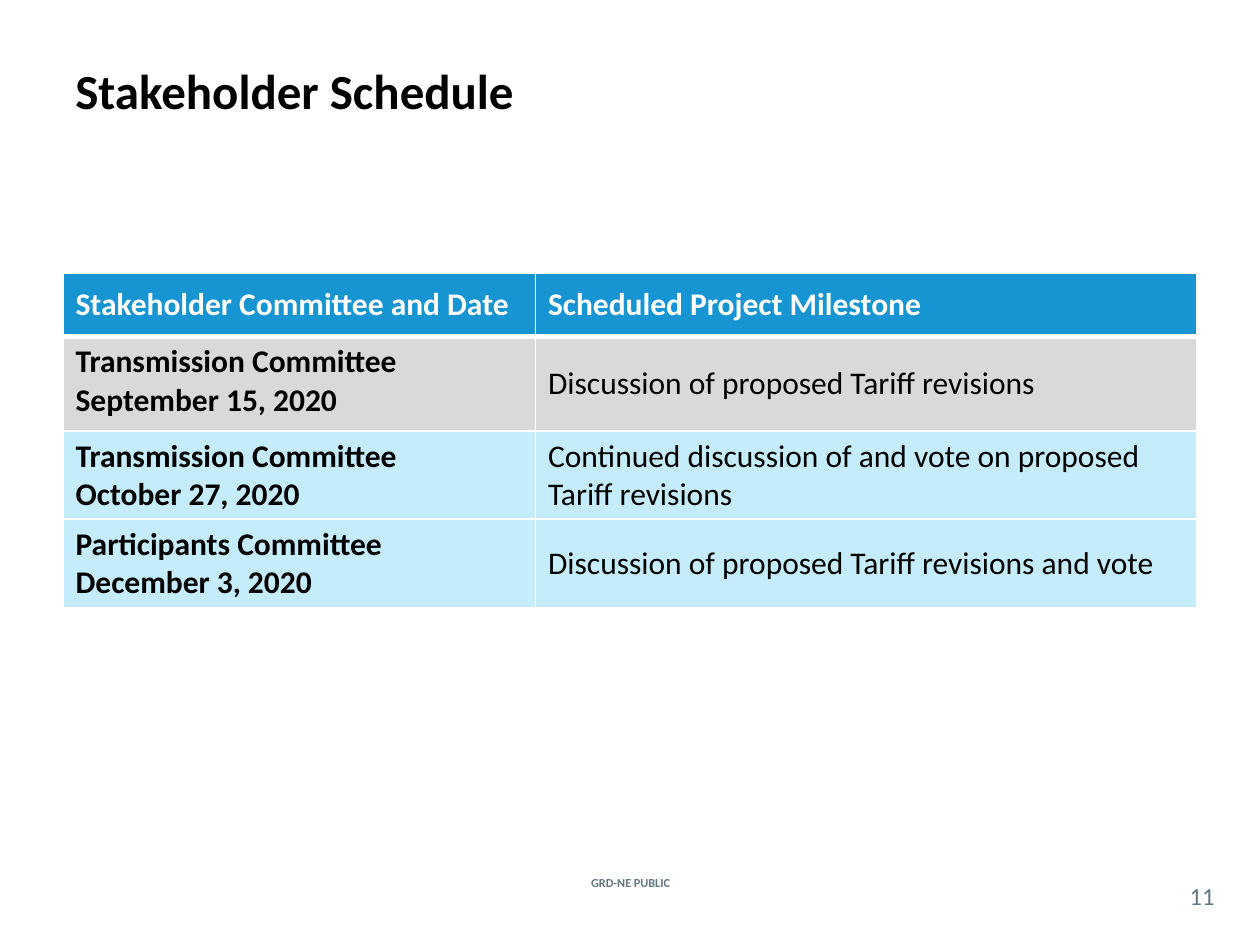
from dataclasses import dataclass

import lxml.etree
import pptx
import pptx.dml.color
import pptx.enum.text
import pptx.oxml.ns
import pptx.util
from pptx.util import Inches

Align = pptx.enum.text.PP_ALIGN
Anchor = pptx.enum.text.MSO_ANCHOR


@dataclass(frozen=True)
class Theme:
    font: str = "Calibri"
    black: str = "000000"
    white: str = "FFFFFF"
    slate: str = "62777F"
    header_blue: str = "1795D2"
    past_gray: str = "D9D9D9"
    upcoming_blue: str = "C5ECFB"
    title_size: int = 28
    table_size: int = 18
    number_size: int = 14
    footer_size: int = 7
    grid_width: int = 1
    header_rule_width: int = 3


THEME = Theme()


@dataclass(frozen=True)
class Style:
    size: int
    color: str
    bold: bool = False
    align: Align = Align.LEFT


@dataclass(frozen=True)
class Label:
    text: str
    left: float
    top: float
    width: float
    height: float
    style: Style
    margins: tuple[float, float] = (0.1, 0.05)


@dataclass(frozen=True)
class ScheduleRow:
    committee: str
    milestone: str
    height: float
    fill: str


LABELS = [
    Label("GRD-NE PUBLIC", 4.27, 6.92, 1.47, 0.17,
          Style(THEME.footer_size, THEME.slate, True, Align.CENTER)),
    Label("Stakeholder Schedule", 0.5, 0.42, 9, 0.58,
          Style(THEME.title_size, THEME.black, True)),
    Label("11", 9.33, 6.96, 0.42, 0.29,
          Style(THEME.number_size, THEME.slate, align=Align.CENTER), (0, 0)),
]

COLUMN_WIDTHS = (3.75, 5.25)
ROWS = [
    ScheduleRow("Stakeholder Committee and Date", "Scheduled Project Milestone",
                0.5, THEME.header_blue),
    ScheduleRow("Transmission Committee\nSeptember 15, 2020",
                "Discussion of proposed Tariff revisions", 0.75, THEME.past_gray),
    ScheduleRow("Transmission Committee\nOctober 27, 2020",
                "Continued discussion of and vote on proposed Tariff revisions",
                0.7, THEME.upcoming_blue),
    ScheduleRow("Participants Committee\nDecember 3, 2020",
                "Discussion of proposed Tariff revisions and vote",
                0.7, THEME.upcoming_blue),
]


def rgb(color: str) -> pptx.dml.color.RGBColor:
    return pptx.dml.color.RGBColor.from_string(color)


def write_text(frame: pptx.text.text.TextFrame, text: str, style: Style) -> None:
    frame.text = text
    frame.word_wrap = True
    for para in frame.paragraphs:
        para.alignment = style.align
        for span in para.runs:
            span.font.name = THEME.font
            span.font.size = pptx.util.Pt(style.size)
            span.font.bold = style.bold
            span.font.color.rgb = rgb(style.color)


def add_label(page: pptx.slide.Slide, label: Label) -> None:
    box = page.shapes.add_textbox(Inches(label.left), Inches(label.top),
                                  Inches(label.width), Inches(label.height))
    frame = box.text_frame
    side, end = label.margins
    frame.margin_left = frame.margin_right = Inches(side)
    frame.margin_top = frame.margin_bottom = Inches(end)
    frame.vertical_anchor = Anchor.MIDDLE
    write_text(frame, label.text, label.style)


def set_borders(cell: pptx.table._Cell, widths: dict[str, int]) -> None:
    """Draw white borders, which the schema wants ahead of the cell fill."""
    properties = cell._tc.get_or_add_tcPr()
    for position, (edge, width) in enumerate(widths.items()):
        line = lxml.etree.Element(pptx.oxml.ns.qn(f"a:{edge}"),
                                  w=str(pptx.util.Pt(width)))
        fill = lxml.etree.SubElement(line, pptx.oxml.ns.qn("a:solidFill"))
        lxml.etree.SubElement(fill, pptx.oxml.ns.qn("a:srgbClr"), val=THEME.white)
        properties.insert(position, line)


def add_schedule(page: pptx.slide.Slide) -> None:
    frame = page.shapes.add_table(
        len(ROWS), len(COLUMN_WIDTHS), Inches(0.5), Inches(2.17),
        Inches(sum(COLUMN_WIDTHS)), Inches(sum(row.height for row in ROWS)))
    table = frame.table
    for column, width in zip(table.columns, COLUMN_WIDTHS):
        column.width = Inches(width)
    for row_index, row in enumerate(ROWS):
        table.rows[row_index].height = Inches(row.height)
        header = row_index == 0
        borders = dict.fromkeys(("lnL", "lnR", "lnT", "lnB"), THEME.grid_width)
        if header:
            borders["lnB"] = THEME.header_rule_width
        elif row_index == 1:
            borders["lnT"] = THEME.header_rule_width
        for column_index, text in enumerate((row.committee, row.milestone)):
            cell = table.cell(row_index, column_index)
            committee = column_index == 0
            style = Style(THEME.table_size, THEME.white if header else THEME.black,
                          header or committee)
            write_text(cell.text_frame, text, style)
            cell.vertical_anchor = (Anchor.TOP if committee and not header
                                    else Anchor.MIDDLE)
            cell.fill.solid()
            cell.fill.fore_color.rgb = rgb(row.fill)
            set_borders(cell, borders)


def main() -> None:
    deck = pptx.Presentation()
    deck.slide_width, deck.slide_height = Inches(10), Inches(7.5)
    page = deck.slides.add_slide(deck.slide_layouts[6])
    for label in LABELS:
        add_label(page, label)
    add_schedule(page)
    deck.save("out.pptx")


if __name__ == "__main__":
    main()
